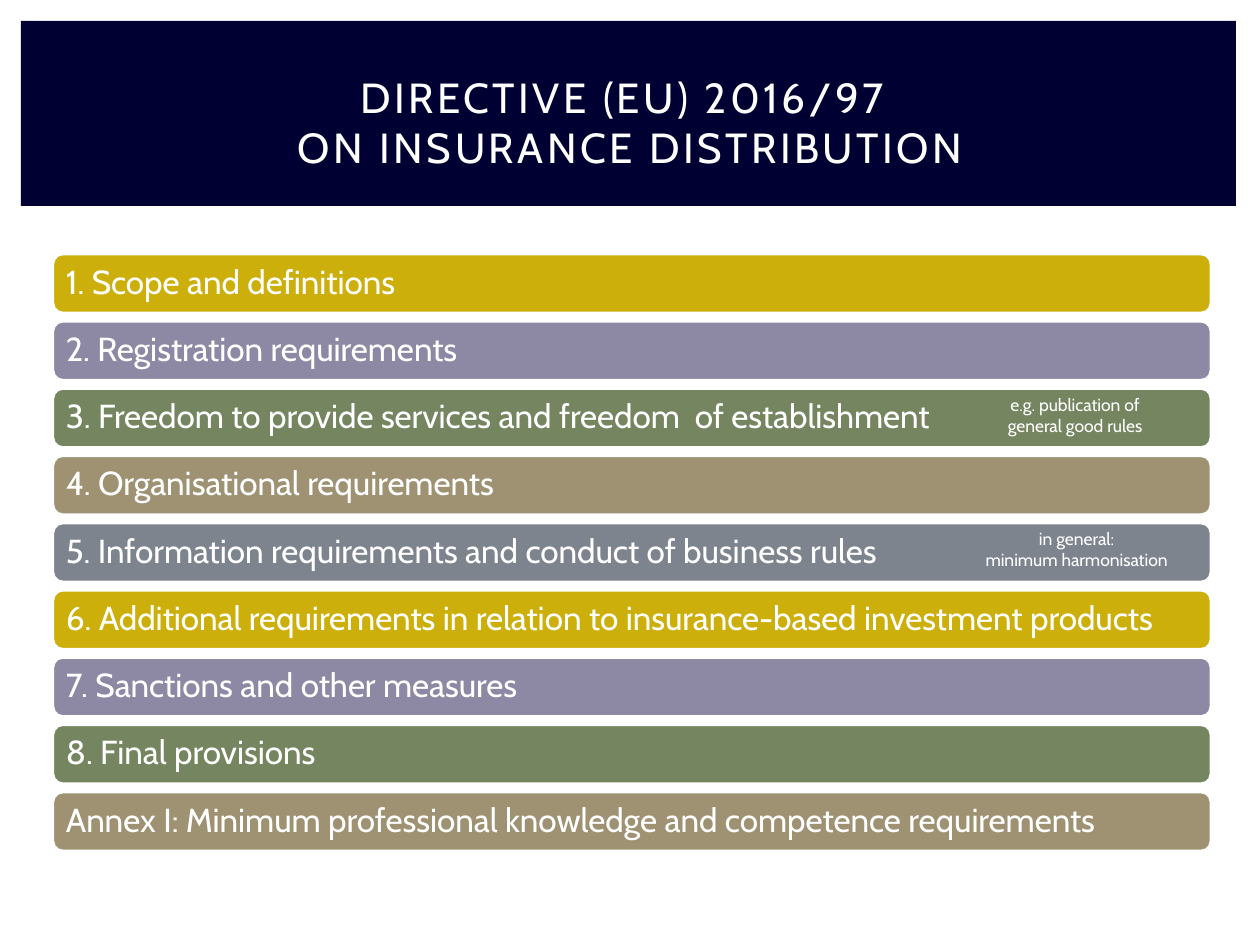
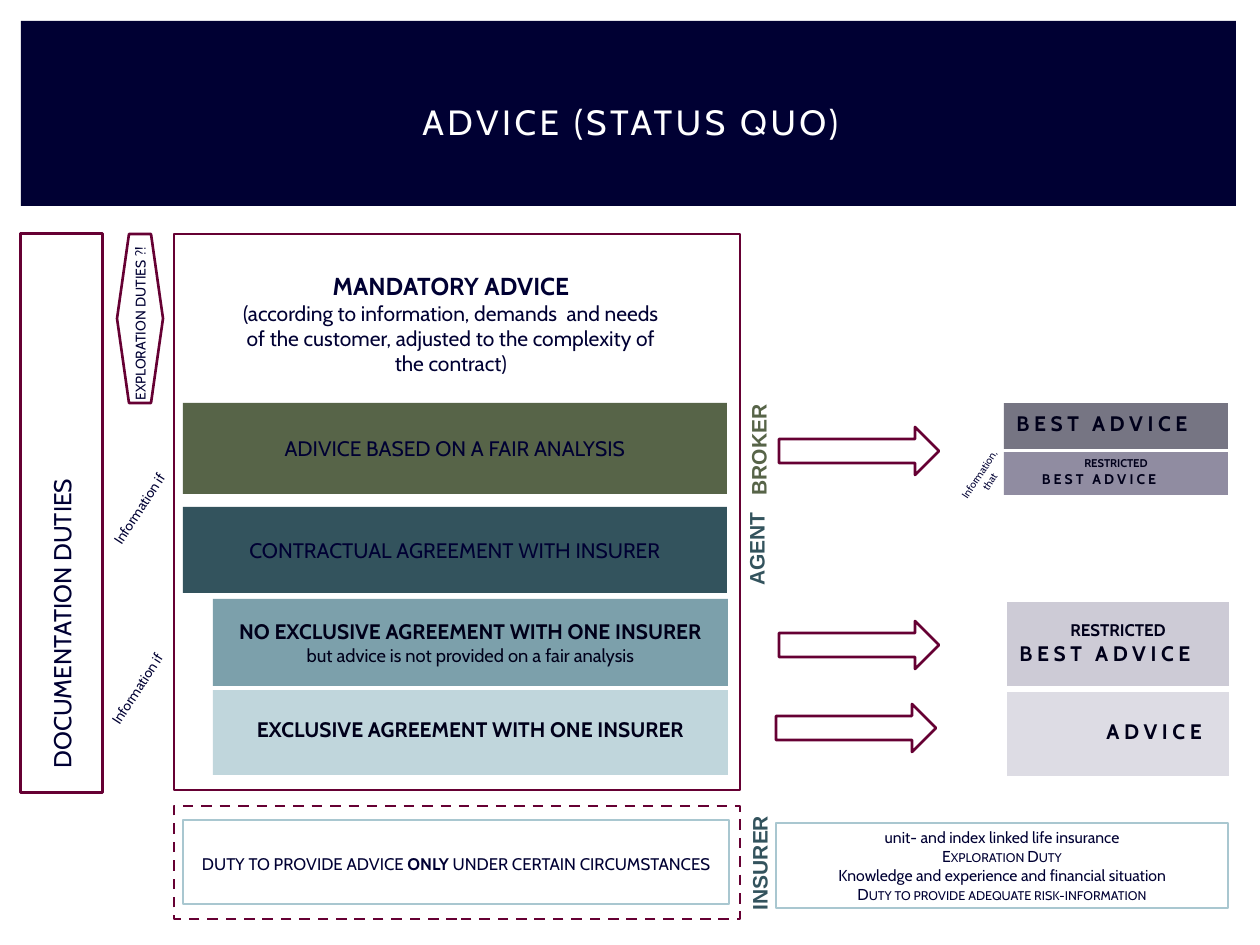
import pptx
import pptx.util
import pptx.dml.color
import pptx.enum.dml
import pptx.enum.shapes
import pptx.enum.text
import pptx.oxml
import pptx.oxml.ns

RGB = pptx.dml.color.RGBColor
KIND = pptx.enum.shapes.MSO_SHAPE
ALIGN = pptx.enum.text.PP_ALIGN
ANCHOR = pptx.enum.text.MSO_ANCHOR

# Colours and fonts
WHITE = RGB(0xFF, 0xFF, 0xFF)
NAVY = RGB(0x00, 0x00, 0x33)
INK = RGB(0x00, 0x00, 0x1A)
WINE = RGB(0x66, 0x00, 0x33)
GOLD = RGB(0xCC, 0xAF, 0x0A)
LILAC = RGB(0x8D, 0x89, 0xA4)
GREEN = RGB(0x74, 0x85, 0x60)
TAN = RGB(0x9E, 0x92, 0x73)
GREY = RGB(0x7E, 0x84, 0x8D)
OLIVE = RGB(0x57, 0x64, 0x48)
TEAL = RGB(0x33, 0x53, 0x5D)
AQUA = RGB(0x4C, 0x7D, 0x8C)
ICE = RGB(0xA9, 0xC7, 0xD0)
PLUM = RGB(0x44, 0x42, 0x55)
MAUVE = RGB(0x67, 0x62, 0x7F)
MIST = RGB(0xBB, 0xB8, 0xC8)
PALE = RGB(0xD1, 0xD0, 0xDB)
MAIN, SIDE = "Cabin", "Arial"

# Shared layout, in px
PX = pptx.util.Inches(1) / 126
SIZE = (1260, 945)
BAND = (21, 21, 1215, 185)
TITLE = (53, 49, 1155, 145)

# Slide 1 content
TITLE1 = ["DIRECTIVE (EU) 2016/97 ", "ON INSURANCE DISTRIBUTION"]
PARTS = [
    "1. Scope and definitions",
    "2. Registration requirements",
    "3. Freedom to provide services and freedom  of establishment",
    "4. Organisational requirements",
    "5. Information requirements and conduct of business rules",
    "6. Additional requirements in relation to insurance-based investment products",
    "7. Sanctions and other measures",
    "8. Final provisions",
    "Annex I: Minimum professional knowledge and competence requirements",
]
TINTS = [GOLD, LILAC, GREEN, TAN, GREY]
BAR = (53, 254, 1158, 59)
LAST = 792  # top of the last bar
NOTES = [
    ((971, 388, 208, 55), ["e.g. publication of general good rules"]),
    ((955, 522, 243, 55), ["in general:", "minimum harmonisation"]),
]

# Slide 2 content: a run is (text, size, flags); b bold, s small caps, w wide
TITLE2 = ["ADVICE (STATUS QUO)"]
FRAMES = [  # place, line colour, dashed
    ((174, 234, 566, 556), WINE, False),
    ((174, 806, 566, 113), WINE, True),
]
LEGAL = [  # place, fill, text
    ((183, 403, 544, 91), OLIVE, "ADIVICE BASED ON A FAIR ANALYSIS"),
    ((183, 507, 544, 86), TEAL, "CONTRACTUAL AGREEMENT WITH INSURER"),
]
BEST = "BEST ADVICE"
LEVELS = [  # place, fill, lift of the text, paragraphs
    ((213, 599, 515, 87), AQUA, 0,
     [[("NO EXCLUSIVE AGREEMENT WITH ONE INSURER", 12, "b")],
      [("but advice is not provided on a fair analysis", 10.5, "")]]),
    ((213, 690, 515, 85), ICE, 6,
     [[("EXCLUSIVE AGREEMENT WITH ONE INSURER", 12, "b")]]),
    ((1004, 403, 224, 46), PLUM, 6, [[(BEST, 12, "bsw")]]),
    ((1004, 452, 224, 43), MAUVE, 7,
     [[("restricted", 8, "bs")], [(BEST, 8, "bsw")]]),
    ((1007, 602, 222, 84), MIST, 6,
     [[("restricted", 12, "bs")], [(BEST, 12, "bsw")]]),
    ((1007, 692, 222, 84), PALE, 6, [[("ADVICE", 12, "bsw")]]),
]
DUTIES = [  # place, paragraphs
    ((183, 820, 546, 84),
     [[("duty to provide advice ", 12, "s"), ("only ", 12, "bs"),
       ("under certain circumstances", 12, "s")]]),
    ((776, 823, 452, 85),
     [[("unit- and index linked life insurance", 9, "")],
      [("Exploration Duty", 9, "s")],
      [("Knowledge and experience and financial situation", 9, "")],
      [("Duty to provide adequate risk-information", 9, "s")]]),
]
ADVICE = ((223, 265, 456, 118),
          [[("MANDATORY ADVICE", 14, "b")],
           [("(according to information, demands  and needs of the customer, "
              "adjusted to the complexity of the contract)", 12, "")]])
TURNED = [  # place, angle, font, colour, size, flags, lines
    ((683, 431, 151, 38), 270, SIDE, OLIVE, 12, "b", ["BROKER"]),
    ((689, 530, 135, 38), 270, SIDE, TEAL, 12, "b", ["AGENT"]),
    ((692, 844, 135, 38), 270, SIDE, TEAL, 12, "b", ["INSURER"]),
    ((14, 309, 253, 30), 270, MAIN, NAVY, 8, "", ["EXPLORATION DUTIES ?!"]),
    ((931, 459, 107, 38), 303.6, MAIN, NAVY, 6, "", ["Information,", "that"]),
    ((93, 490, 107, 47), 303, MAIN, NAVY, 8, "", ["Information if"]),
    ((91, 670, 107, 47), 303, MAIN, NAVY, 8, "", ["Information if"]),
]
RECORD = ((-218, 472, 559, 82), "DOCUMENTATION DUTIES")
EXPLORE = (117, 234, 46, 169)
ARROWS = [(779, 427), (779, 621), (776, 704)]


def px(num):
    return pptx.util.Emu(round(num * PX))


def place(item, box):
    item.left, item.top, item.width, item.height = map(px, box)


def style(run, size, color, flags="", font=MAIN, gap=0):
    run.font.size = pptx.util.Pt(size)
    run.font.name = font
    run.font.color.rgb = color
    run.font.bold = "b" in flags
    props = run._r.get_or_add_rPr()
    if "s" in flags:
        props.set("cap", "small")
    if "w" in flags:
        gap = size * 0.22
    if gap:
        props.set("spc", str(round(gap * 100)))


def write(shape, paras, color, font=MAIN, align=ALIGN.CENTER):
    frame = shape.text_frame
    frame.word_wrap = True
    for num, runs in enumerate(paras):
        para = frame.add_paragraph() if num else frame.paragraphs[0]
        para.alignment = align
        for text, size, flags in runs:
            run = para.add_run()
            run.text = text
            style(run, size, color, flags, font)


def draw(slide, kind, box, fill=None, line=None, solid=100):
    shape = slide.shapes.add_shape(kind, *map(px, box))
    shape.shadow.inherit = False
    if fill is None:
        shape.fill.background()
    else:
        shape.fill.solid()
        shape.fill.fore_color.rgb = fill
        if solid < 100:
            tint = shape._element.spPr.find(pptx.oxml.ns.qn("a:solidFill"))[0]
            tint.append(pptx.oxml.parse_xml(
                f'<a:alpha {pptx.oxml.ns.nsdecls("a")} val="{solid * 1000}"/>'))
    if line is None:
        shape.line.fill.background()
    else:
        shape.line.color.rgb = line
        shape.line.width = pptx.util.Pt(1.5)
    shape.text_frame.vertical_anchor = ANCHOR.MIDDLE
    return shape


def label(slide, box, paras, color, font=MAIN, angle=0):
    item = slide.shapes.add_textbox(*map(px, box))
    item.rotation = angle
    write(item, paras, color, font)


def inset(shape, low=0):
    shape.text_frame.margin_top = 0
    shape.text_frame.margin_bottom = px(low)


def start(deck, layout, lines, size):
    slide = deck.slides.add_slide(layout)
    frame = slide.shapes.title.text_frame
    frame.word_wrap = True
    frame.auto_size = pptx.enum.text.MSO_AUTO_SIZE.NONE
    frame.vertical_anchor = ANCHOR.MIDDLE
    para = frame.paragraphs[0]
    para.alignment = ALIGN.CENTER
    for num, text in enumerate(lines):
        if num:
            para.add_line_break()
        run = para.add_run()
        run.text = text
        style(run, size, WHITE, gap=2)
    return slide


def outline(slide):
    # Numbered bars
    left, top, width, high = BAR
    step = (LAST - top) / (len(PARTS) - 1)
    for num, text in enumerate(PARTS):
        box = (left, top + num * step, width, high)
        bar = draw(slide, KIND.ROUNDED_RECTANGLE, box,
                   TINTS[num % len(TINTS)], WHITE)
        inset(bar)
        bar.text_frame.margin_left = px(10)
        bar.text_frame.margin_right = px(10)
        write(bar, [[(text, 19, "")]], WHITE, align=ALIGN.LEFT)
        bar.text_frame.paragraphs[0].line_spacing = 0.9
    # Side notes
    for box, lines in NOTES:
        label(slide, box, [[(text, 10, "")] for text in lines], WHITE)


def advice(slide):
    # Frames
    for box, color, dash in FRAMES:
        frame = draw(slide, KIND.RECTANGLE, box, WHITE, color)
        if dash:
            frame.line.dash_style = pptx.enum.dml.MSO_LINE.DASH
    label(slide, *ADVICE, NAVY)
    # Filled boxes
    for box, fill, text in LEGAL:
        write(draw(slide, KIND.RECTANGLE, box, fill),
              [[(text, 12, "")]], NAVY)
    for box, fill, lift, paras in LEVELS:
        shape = draw(slide, KIND.RECTANGLE, box, fill, solid=73)
        inset(shape, lift)
        write(shape, paras, INK)
    # Outlined boxes
    for box, paras in DUTIES:
        shape = draw(slide, KIND.RECTANGLE, box, line=ICE)
        inset(shape)
        write(shape, paras, NAVY)
    box, text = RECORD
    shape = draw(slide, KIND.RECTANGLE, box, line=WINE)
    shape.rotation = 270
    shape.text_frame.margin_left = px(24)
    write(shape, [[(text, 14, "")]], NAVY, align=ALIGN.LEFT)
    # Arrows
    shape = draw(slide, KIND.LEFT_RIGHT_ARROW, EXPLORE, line=WINE)
    shape.adjustments[0] = 1
    shape.adjustments[1] = 0.26
    for left, top in ARROWS:
        draw(slide, KIND.RIGHT_ARROW, (left, top, 160, 48), line=WINE)
    # Turned labels
    for box, angle, font, color, size, flags, lines in TURNED:
        label(slide, box, [[(text, size, flags)] for text in lines],
              color, font, angle)


def main():
    deck = pptx.Presentation()
    deck.slide_width, deck.slide_height = map(px, SIZE)
    layout = deck.slide_layouts[5]
    place(layout.placeholders[0], TITLE)
    first = start(deck, layout, TITLE1, 24)
    # The band sits on the layout, behind each title
    band = draw(first, KIND.RECTANGLE, BAND, NAVY)
    layout.shapes._spTree.insert(2, band._element)
    outline(first)
    advice(start(deck, layout, TITLE2, 20))
    deck.save("out.pptx")


if __name__ == "__main__":
    main()
